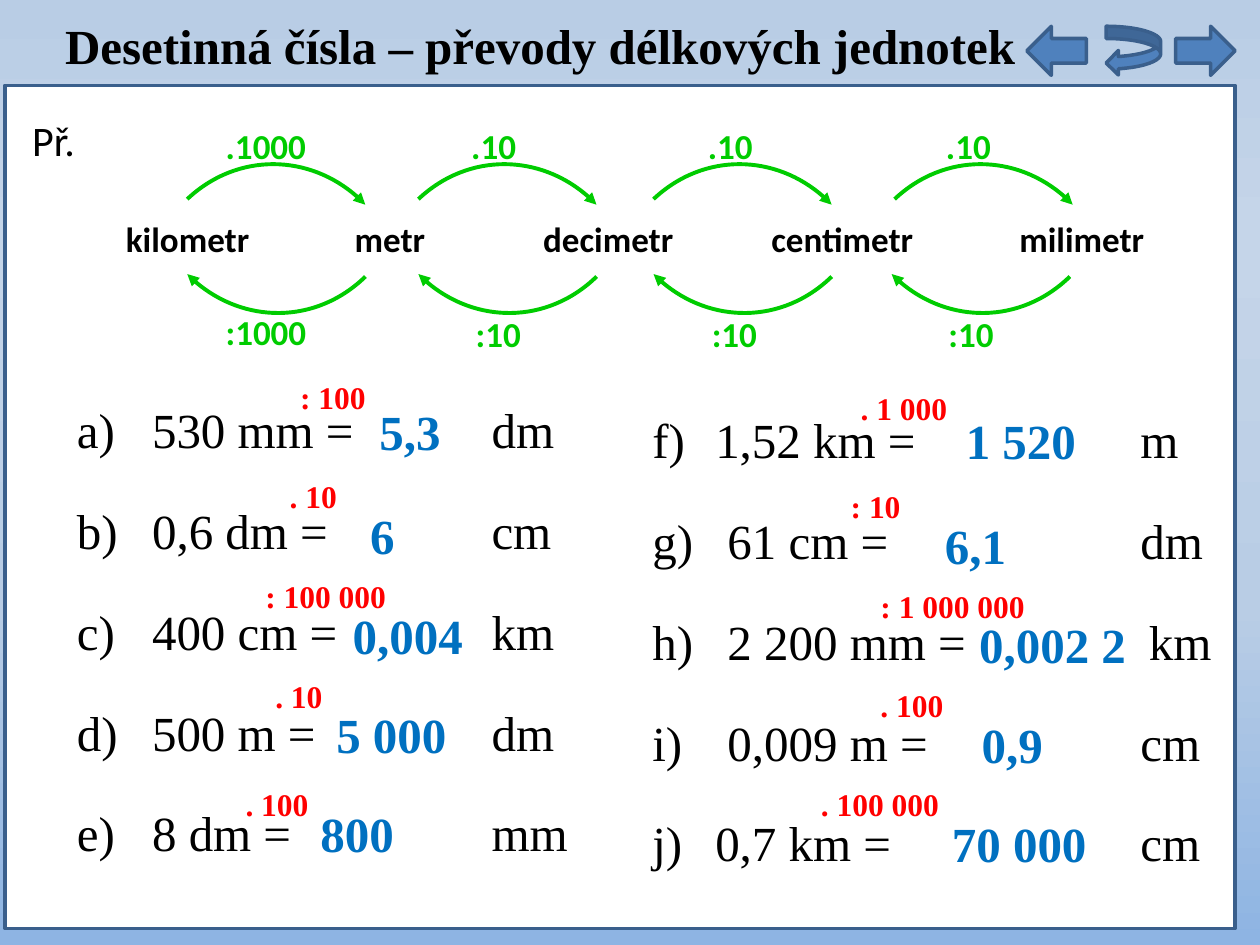
from dataclasses import dataclass

from lxml import etree
from pptx import Presentation
from pptx import util as u
from pptx.dml.color import RGBColor
from pptx.enum import shapes, text
from pptx.oxml.ns import qn


@dataclass(frozen=True)
class Theme:
    serif: str = "Times New Roman"
    sans: str = "Calibri"
    black: str = "000000"
    white: str = "FFFFFF"
    blue: str = "4F81BD"
    outline: str = "3A5F8C"
    green: str = "00CC00"
    answer: str = "0070C0"
    factor: str = "FF0000"
    background: tuple = ((0, "B9CDE5"), (25, "C5D5E9"), (64, "B9CDE5"),
                         (100, "8EB4E3"), (100, "8EB4E3"))
    large: int = 28
    medium: int = 24
    unit: int = 20
    small: int = 18


def add_xml(parent, tag, **attributes):
    return etree.SubElement(parent, qn(tag), attributes)


def box(left, top, width, height):
    return u.Cm(left), u.Cm(top), u.Cm(width), u.Cm(height)


class SlideBuilder:
    def __init__(self, slide, theme):
        self.slide = slide
        self.theme = theme

    def background(self):
        fill = self.slide.background.fill
        fill.gradient()
        fill.gradient_angle = 270
        stops = self.slide.element.find(".//" + qn("a:gsLst"))
        for stop in list(stops):
            stops.remove(stop)
        for percent, color in self.theme.background:
            stop = add_xml(stops, "a:gs", pos=str(percent * 1000))
            add_xml(stop, "a:srgbClr", val=color)

    def preset(self, kind, place, color, mirrored=False):
        shape = self.slide.shapes.add_shape(kind, *box(*place))
        shape.shadow.inherit = False
        shape.fill.solid()
        shape.fill.fore_color.rgb = RGBColor.from_string(color)
        shape.line.color.rgb = RGBColor.from_string(self.theme.outline)
        shape.line.width = u.Pt(2)
        if mirrored:
            shape.element.spPr.find(qn("a:xfrm")).set("flipH", "1")

    def run(self, paragraph, words, size, font, color, bold):
        run = paragraph.add_run()
        run.text = words
        run.font.size = u.Pt(size)
        run.font.name = font
        run.font.bold = bold
        run.font.color.rgb = RGBColor.from_string(color)

    def label(self, words, place, size, font, color, bold=True, centred=False,
              middle=True, parent=None):
        shape = (parent or self.slide).shapes.add_textbox(*box(*place))
        frame = shape.text_frame
        frame.word_wrap = True
        if middle:
            frame.vertical_anchor = text.MSO_ANCHOR.MIDDLE
        else:
            frame.auto_size = text.MSO_AUTO_SIZE.SHAPE_TO_FIT_TEXT
        paragraph = frame.paragraphs[0]
        if centred:
            paragraph.alignment = text.PP_ALIGN.CENTER
        self.run(paragraph, words, size, font, color, bold)

    def conversion(self, words, arc_place, rotation, label_place):
        """Group a quarter-circle arrow with its multiplier."""
        group = self.slide.shapes.add_group_shape()
        left, top = (u.Cm(length) for length in arc_place)
        radius = u.Cm(2.54)
        builder = group.shapes.build_freeform(left, top)
        builder.add_line_segments([(left + radius, top + radius)], close=False)
        arc = builder.convert_to_shape()
        outline = arc.element.spPr.find(".//" + qn("a:path"))
        outline.remove(outline.find(qn("a:lnTo")))
        curve = add_xml(outline, "a:cubicBezTo")
        for across, down in ((0.55, 0), (1, 0.45), (1, 1)):
            add_xml(curve, "a:pt", x=str(int(radius * across)), y=str(int(radius * down)))
        arc.shadow.inherit = False
        arc.rotation = rotation
        arc.fill.background()
        arc.line.color.rgb = RGBColor.from_string(self.theme.green)
        arc.line.width = u.Pt(2.25)
        add_xml(arc.element.spPr.find(qn("a:ln")), "a:tailEnd", type="triangle")
        self.label(words, label_place, self.theme.unit, self.theme.sans,
                   self.theme.green, parent=group)

    def exercises(self, tasks, place, start):
        """Lettered list whose target units stand at tab stops."""
        frame = self.slide.shapes.add_textbox(*box(*place)).text_frame
        frame.word_wrap = True
        frame.auto_size = text.MSO_AUTO_SIZE.SHAPE_TO_FIT_TEXT
        for index, (quantity, target, tab) in enumerate(tasks):
            paragraph = frame.add_paragraph() if index else frame.paragraphs[0]
            paragraph.space_before = u.Pt(18)
            paragraph.space_after = u.Pt(6)
            self.run(paragraph, f"{quantity} =\t{target}", self.theme.large,
                     self.theme.serif, self.theme.black, False)
            properties = paragraph._p.get_or_add_pPr()
            properties.set("marL", str(u.Cm(1.27)))
            properties.set("indent", str(-u.Cm(1.27)))
            add_xml(properties, "a:buFont", typeface="+mj-lt")
            add_xml(properties, "a:buAutoNum", type="alphaLcParenR", startAt=str(start))
            stops = add_xml(properties, "a:tabLst")
            add_xml(stops, "a:tab", pos=str(u.Cm(tab)), algn="l")


UNITS = [("kilometr", 2.29, 5.21), ("metr", 6.9, 5.21), ("decimetr", 10.7, 5.21),
         ("centimetr", 15.3, 5.21), ("milimetr", 20.3, 3.81)]
# factor, label width, upper arc and label left, lower arc and label left, lower label top
STEPS = [("1000", 2.79, 4.3, 4.3, 4.3, 4.3, 6.09),
         ("10", 2.01, 8.96, 9.25, 8.96, 9.34, 6.12),
         ("10", 2.01, 13.7, 14.02, 13.7, 14.1, 6.12),
         ("10", 2.01, 18.56, 18.82, 18.5, 18.87, 6.12)]
LEFT_TAB, RIGHT_TAB, WIDE_TAB = 8.36, 9.84, 10.01
LEFT_TASKS = [(" 530 mm", "dm", LEFT_TAB), (" 0,6 dm", "cm", LEFT_TAB),
              (" 400 cm", "km", LEFT_TAB), (" 500 m", "dm", LEFT_TAB),
              (" 8 dm", "mm", LEFT_TAB)]
RIGHT_TASKS = [("1,52 km", "m", RIGHT_TAB), (" 61 cm", "dm", RIGHT_TAB),
               (" 2 200 mm", "km", WIDE_TAB), (" 0,009 m", "cm", RIGHT_TAB),
               ("0,7 km", "cm", RIGHT_TAB)]
# words, left, top, width
ANSWERS = [("5,3", 7.4, 7.96, 2.11), ("6", 7.21, 10.07, 1.88), ("0,004", 6.86, 12.08, 3.23),
           ("5 000", 6.53, 14.07, 3.18), ("800", 6.21, 16.08, 2.9),
           ("1 520", 19.22, 8.16, 3.07), ("6,1", 18.8, 10.26, 2.69),
           ("0,002 2", 19.49, 12.26, 4.01), ("0,9", 19.54, 14.27, 2.77),
           ("70 000", 18.94, 16.28, 3.76)]
FACTORS = [(": 100", 5.8, 7.49, 2.11), (". 10", 5.59, 9.5, 2.11), (": 100 000", 5.1, 11.51, 3),
           (". 10", 5.3, 13.52, 1.6), (". 100", 4.7, 15.7, 1.8),
           (". 1 000", 17.1, 7.72, 2.39), (": 10", 16.9, 9.7, 1.8),
           (": 1 000 000", 17.5, 11.7, 3.61), (". 100", 17.5, 13.7, 1.8),
           (". 100 000", 16.3, 15.7, 3)]


def main():
    presentation = Presentation()
    presentation.slide_width, presentation.slide_height = u.Cm(25.4), u.Cm(19.05)
    theme = Theme()
    builder = SlideBuilder(presentation.slides.add_slide(presentation.slide_layouts[6]), theme)
    kinds = shapes.MSO_SHAPE

    builder.background()
    builder.preset(kinds.RECTANGLE, (0.1, 1.72, 24.8, 17), theme.white)
    builder.preset(kinds.RIGHT_ARROW, (23.7, 0.53, 1.2, 0.99), theme.blue)
    builder.preset(kinds.RIGHT_ARROW, (20.7, 0.53, 1.2, 0.99), theme.blue, mirrored=True)
    builder.preset(kinds.CURVED_LEFT_ARROW, (22.3, 0.53, 1.1, 0.99), theme.blue)
    builder.label("Desetinná čísla – převody délkových jednotek", (0.07, -0.08, 21.64, 1.96),
                  theme.large, theme.serif, theme.black, centred=True)
    builder.label("Př.", (0.4, 1.92, 23.5, 1.8), theme.medium, theme.sans, theme.black,
                  bold=False)

    for name, left, width in UNITS:
        builder.label(name, (left, 4.22, width, 1.19), theme.unit, theme.sans, theme.black)
    for factor, width, upper, upper_label, lower, lower_label, lower_top in STEPS:
        builder.conversion("." + factor, (upper, 2.8), 316.8, (upper_label, 2.34, width, 1.19))
        builder.conversion(":" + factor, (lower, 4.28), 135.8,
                           (lower_label, lower_top, width, 1.19))

    builder.exercises(LEFT_TASKS, (1.3, 7.93, 13.21, 9.65), 1)
    builder.exercises(RIGHT_TASKS, (12.9, 8.13, 11.81, 9.65), 6)
    for items, height, size, color in ((ANSWERS, 1.45, theme.large, theme.answer),
                                       (FACTORS, 1.02, theme.small, theme.factor)):
        for words, left, top, width in items:
            builder.label(words, (left, top, width, height), size, theme.serif, color,
                          middle=False)

    presentation.save("out.pptx")


if __name__ == "__main__":
    main()
